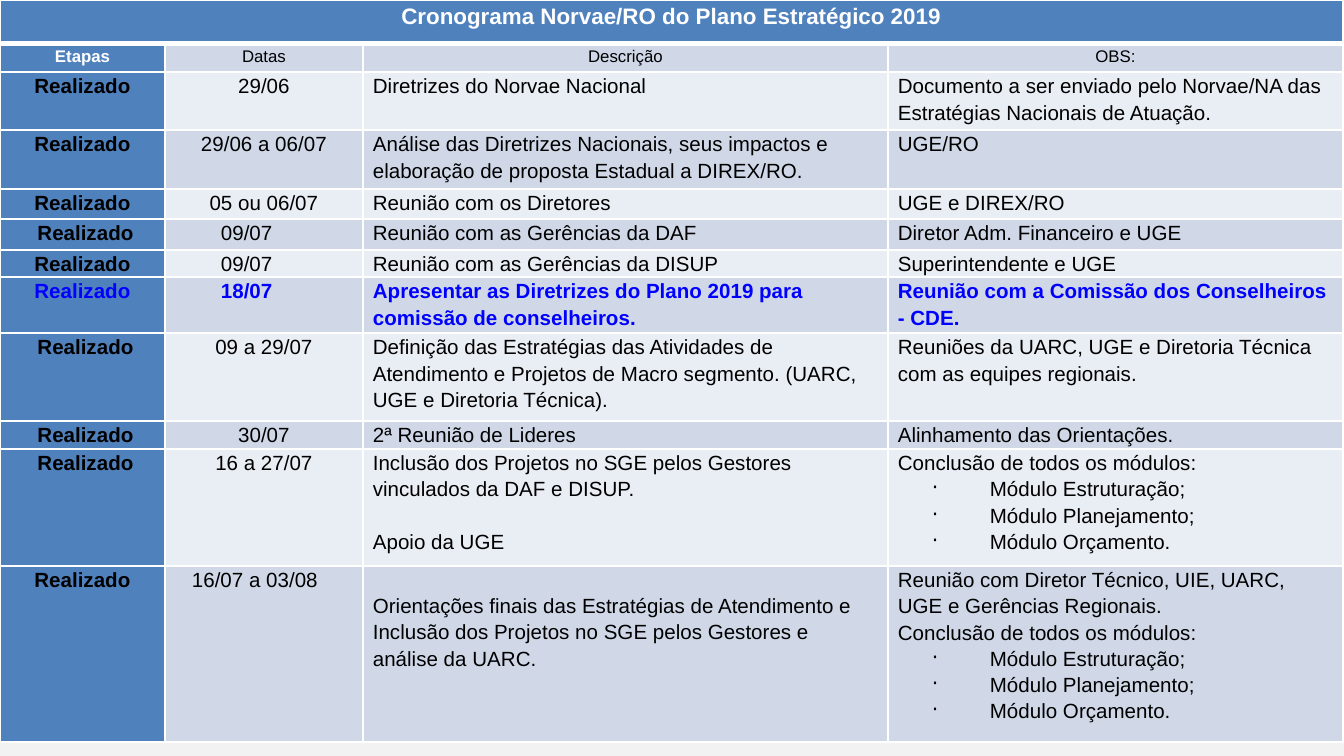
from lxml import etree
from pptx import Presentation
from pptx.dml.color import RGBColor
from pptx.enum.text import PP_ALIGN
from pptx.oxml.ns import qn
from pptx.util import Pt

LEFT, CENTER = PP_ALIGN.LEFT, PP_ALIGN.CENTER
PX = 914400 / 134.4
BLUE, PALE, LIGHT = "4F81BD", "D0D8E8", "E9EDF4"
BLACK, WHITE, VIVID = "000000", "FFFFFF", "0000FF"

TITLE = "Cronograma Norvae/RO do Plano Estratégico 2019"
HEADS = ["Etapas", "Datas", "Descrição", "OBS:"]
COLS = [165, 198, 525, 455]
HIGH = [44, 28, 58, 59, 30, 31, 27, 56, 88, 28, 117, 176]
DONE = "Realizado"
MODS = ["Conclusão de todos os módulos:", "· Módulo Estruturação;",
        "· Módulo Planejamento;", "· Módulo Orçamento."]
STEPS = [
    ("29/06", ["Diretrizes do Norvae Nacional"],
     ["Documento a ser enviado pelo Norvae/NA das Estratégias Nacionais de Atuação."]),
    ("29/06 a 06/07",
     ["Análise das Diretrizes Nacionais, seus impactos e elaboração de proposta Estadual a DIREX/RO."],
     ["UGE/RO"]),
    ("05 ou 06/07", ["Reunião com os Diretores"], ["UGE e DIREX/RO"]),
    ("09/07", ["Reunião com as Gerências da DAF"], ["Diretor Adm. Financeiro e UGE"]),
    ("09/07", ["Reunião com as Gerências da DISUP"], ["Superintendente e UGE"]),
    ("18/07", ["Apresentar as Diretrizes do Plano 2019 para comissão de conselheiros."],
     ["Reunião com a Comissão dos Conselheiros - CDE."]),
    ("09 a 29/07",
     ["Definição das Estratégias das Atividades de Atendimento e Projetos de Macro segmento. "
      "(UARC, UGE e Diretoria Técnica)."],
     ["Reuniões da UARC, UGE e Diretoria Técnica com as equipes regionais."]),
    ("30/07", ["2ª Reunião de Lideres"], ["Alinhamento das Orientações."]),
    ("16 a 27/07",
     ["Inclusão dos Projetos no SGE pelos Gestores vinculados da DAF e DISUP.", "Apoio da UGE"],
     MODS),
    ("16/07 a 03/08",
     ["Orientações finais das Estratégias de Atendimento e Inclusão dos Projetos no SGE "
      "pelos Gestores e análise da UARC."],
     ["Reunião com Diretor Técnico, UIE, UARC, UGE e Gerências Regionais."] + MODS),
]
NUDGED = {5, 8, 9, 10}
INDENT = {5: 46, 6: 46, 7: 46, 11: 17}


def px(n):
    return round(n * PX)


def write(cell, lines, fill, size=11, color=BLACK, bold=False, align=LEFT,
          side=10, top=0, indent=0, gap=0, base=1):
    cell.margin_left = cell.margin_right = px(side)
    cell.margin_top, cell.margin_bottom = px(top), 0
    props = cell._tc.get_or_add_tcPr()
    for edge, width in zip("LRTB", (1, 1, 1, base)):
        line = etree.SubElement(props, qn(f"a:ln{edge}"), w=str(Pt(width)))
        solid = etree.SubElement(line, qn("a:solidFill"))
        etree.SubElement(solid, qn("a:srgbClr"), val=WHITE)
    cell.fill.solid()
    cell.fill.fore_color.rgb = RGBColor.from_string(fill)
    frame = cell.text_frame
    for i, text in enumerate(lines):
        para = frame.add_paragraph() if i else frame.paragraphs[0]
        para.alignment, para.line_spacing = align, 1.15
        if i and gap:
            para.space_before = px(gap)
        form = para._p.get_or_add_pPr()
        if text.startswith("· "):
            text = text[2:]
            form.set("marL", str(px(92)))
            form.set("indent", str(px(-58)))
            etree.SubElement(form, qn("a:buChar"), char="·")
        elif indent:
            form.set("marL", str(px(indent)))
        run = para.add_run()
        run.text = text
        font = run.font
        font.name, font.size, font.bold = "Arial", Pt(size), bold
        font.color.rgb = RGBColor.from_string(color)


deck = Presentation()
deck.slide_width, deck.slide_height = px(1344), px(756)
slide = deck.slides.add_slide(deck.slide_layouts[6])
back = slide.background.fill
back.solid()
back.fore_color.rgb = RGBColor.from_string("F2F2F2")

table = slide.shapes.add_table(len(HIGH), len(COLS), 0, 0, px(sum(COLS)), px(sum(HIGH))).table
table.first_row = table.horz_banding = False
for col, wide in zip(table.columns, COLS):
    col.width = px(wide)
for row, high in zip(table.rows, HIGH):
    row.height = px(high)

table.cell(0, 0).merge(table.cell(0, 3))
write(table.cell(0, 0), [TITLE], BLUE, size=12, color=WHITE, bold=True,
      align=CENTER, side=8, base=3)
for c, head in enumerate(HEADS):
    first = c == 0
    write(table.cell(1, c), [head], BLUE if first else PALE, size=9,
          color=WHITE if first else BLACK, bold=first, align=CENTER, side=8)

for r, (date, task, note) in enumerate(STEPS, 2):
    fill = PALE if r % 2 else LIGHT
    key = r == 7
    look = {"color": VIVID if key else BLACK, "bold": key}
    write(table.cell(r, 0), [DONE], BLUE, color=look["color"], bold=True,
          align=CENTER, indent=6 if r in NUDGED else 0)
    write(table.cell(r, 1), [date], fill, align=LEFT if r in INDENT else CENTER,
          indent=INDENT.get(r, 0), **look)
    write(table.cell(r, 2), task, fill, top=26 if r == 11 else 0, gap=26, **look)
    write(table.cell(r, 3), note, fill, **look)

deck.save("out.pptx")
